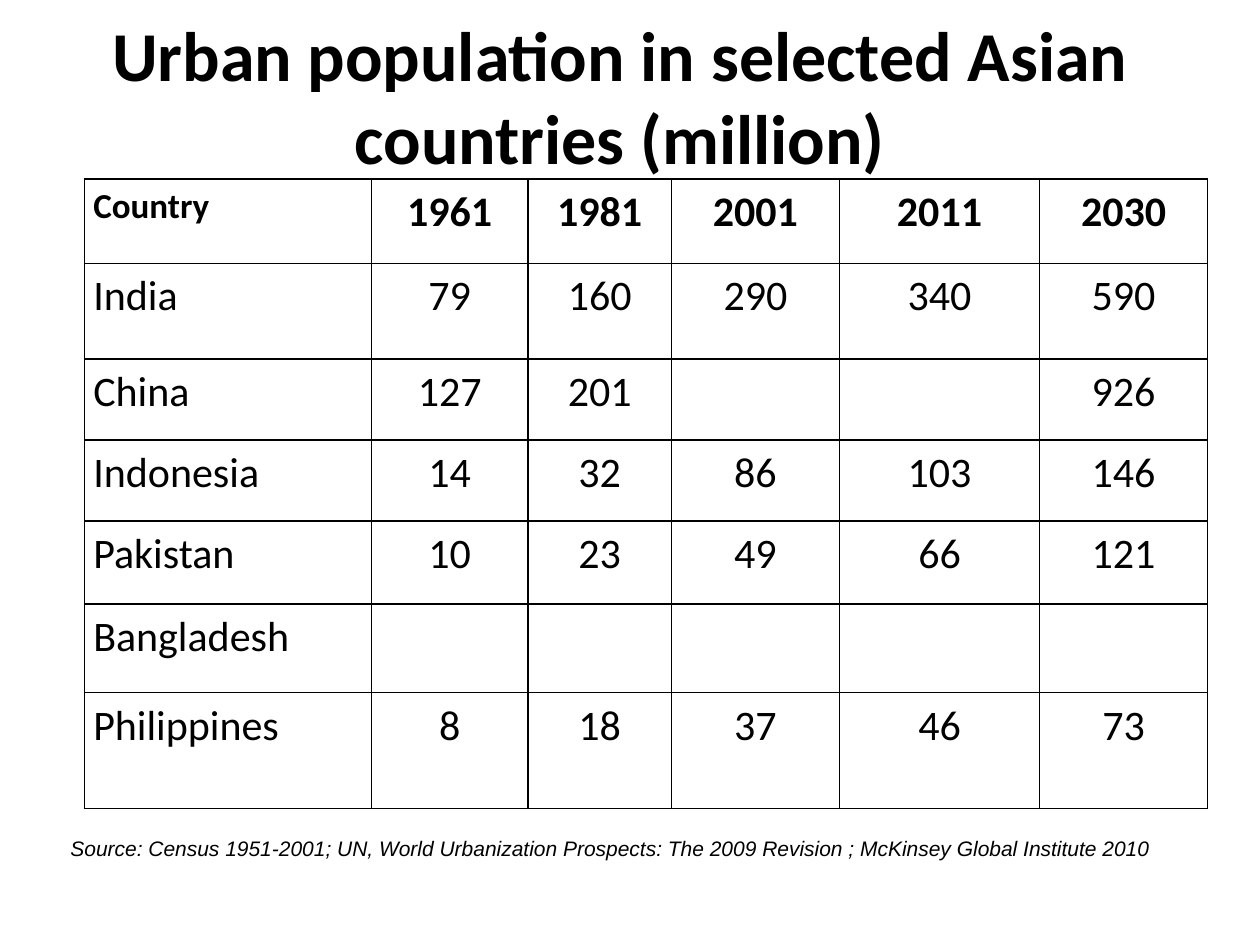
from dataclasses import dataclass
from lxml.etree import fromstring
from pptx import Presentation
from pptx.dml.color import RGBColor
from pptx.enum.text import MSO_ANCHOR, MSO_AUTO_SIZE, PP_ALIGN
from pptx.oxml.ns import nsdecls
from pptx.util import Cm, Pt


@dataclass(frozen=True)
class Theme:
    """Hold the fonts, sizes and colours."""
    ink: str = "000000"
    main: str = "Calibri"
    note: str = "Arial"
    title: int = 40
    label: int = 20
    cell: int = 24
    small: int = 12
    line: int = 1


WIDTHS = (5.79, 3.15, 2.9, 3.38, 4.04, 3.38)
HEIGHTS = (1.7, 1.93, 1.63, 1.63, 1.68, 1.78, 2.34)
ROWS = (
    ("Country", "1961", "1981", "2001", "2011", "2030"),
    ("India", "79", "160", "290", "340", "590"),
    ("China", "127", "201", "", "", "926"),
    ("Indonesia", "14", "32", "86", "103", "146"),
    ("Pakistan", "10", "23", "49", "66", "121"),
    ("Bangladesh", "", "", "", "", ""),
    ("Philippines", "8", "18", "37", "46", "73"),
)
SOURCE = ("Source: Census 1951-2001; UN, World Urbanization Prospects: "
          "The 2009 Revision ; McKinsey Global Institute 2010")


def write(frame, text, *, font, size, color, bold=False, italic=False,
          align=PP_ALIGN.LEFT, space=None):
    """Put formatted text into the first paragraph of a frame."""
    para = frame.paragraphs[0]
    para.text = text
    para.alignment = align
    para.line_spacing = space
    for face in (para.font, *(run.font for run in para.runs)):
        face.name = font
        face.size = Pt(size)
        face.bold = bold
        face.italic = italic
        face.color.rgb = RGBColor.from_string(color)


class Page:
    """Build the elements of one slide in one style."""

    def __init__(self, slide, theme):
        """Keep the slide and its theme."""
        self.slide = slide
        self.theme = theme

    def title(self, text, left, top, width, height):
        """Fill and place the title."""
        shape = self.slide.shapes.title
        shape.left, shape.top = Cm(left), Cm(top)
        shape.width, shape.height = Cm(width), Cm(height)
        shape.text_frame.vertical_anchor = MSO_ANCHOR.MIDDLE
        write(shape.text_frame, text, font=self.theme.main, bold=True,
              size=self.theme.title, color=self.theme.ink,
              align=PP_ALIGN.CENTER)

    def border(self, cell):
        """Draw all four sides of a cell."""
        props = cell._tc.get_or_add_tcPr()
        for spot, side in enumerate("LRTB"):
            props.insert(spot, fromstring(
                f'<a:ln{side} {nsdecls("a")} w="{Pt(self.theme.line)}">'
                f'<a:solidFill><a:srgbClr val="{self.theme.ink}"/>'
                f'</a:solidFill></a:ln{side}>'))

    def table(self, rows, widths, heights, left, top):
        """Add a ruled table with a bold head row."""
        grid = self.slide.shapes.add_table(
            len(rows), len(widths), Cm(left), Cm(top),
            Cm(sum(widths)), Cm(sum(heights))).table
        grid.horz_banding = grid.first_row = False
        for col, width in zip(grid.columns, widths):
            col.width = Cm(width)
        for y, (row, height) in enumerate(zip(rows, heights)):
            grid.rows[y].height = Cm(height)
            for x, text in enumerate(row):
                self.cell(grid.cell(y, x), text, head=y == 0, first=x == 0)

    def cell(self, cell, text, head, first):
        """Style and fill one cell."""
        cell.fill.background()
        self.border(cell)
        cell.margin_left = cell.margin_right = Cm(0.18)
        cell.margin_top = cell.margin_bottom = 0
        size = self.theme.label if head and first else self.theme.cell
        write(cell.text_frame, text, font=self.theme.main, size=size,
              color=self.theme.ink, bold=head, space=1.15,
              align=PP_ALIGN.LEFT if first else PP_ALIGN.CENTER)

    def note(self, text, left, top, width, height):
        """Add a small italic source line."""
        frame = self.slide.shapes.add_textbox(
            Cm(left), Cm(top), Cm(width), Cm(height)).text_frame
        frame.word_wrap = True
        frame.auto_size = MSO_AUTO_SIZE.SHAPE_TO_FIT_TEXT
        frame.margin_left = Cm(0.35)
        write(frame, text, font=self.theme.note, size=self.theme.small,
              color=self.theme.ink, italic=True)


def main():
    """Build and save the deck."""
    deck = Presentation()
    deck.slide_width, deck.slide_height = Cm(25.4), Cm(19.05)
    page = Page(deck.slides.add_slide(deck.slide_layouts[5]), Theme())
    page.title("Urban population in selected Asian countries (million)",
               1.7, 0.43, 21.59, 2.97)
    page.table(ROWS, WIDTHS, HEIGHTS, 1.7, 3.61)
    page.note(SOURCE, 1.07, 16.71, 23.5, 0.76)
    deck.save("out.pptx")


if __name__ == "__main__":
    main()
